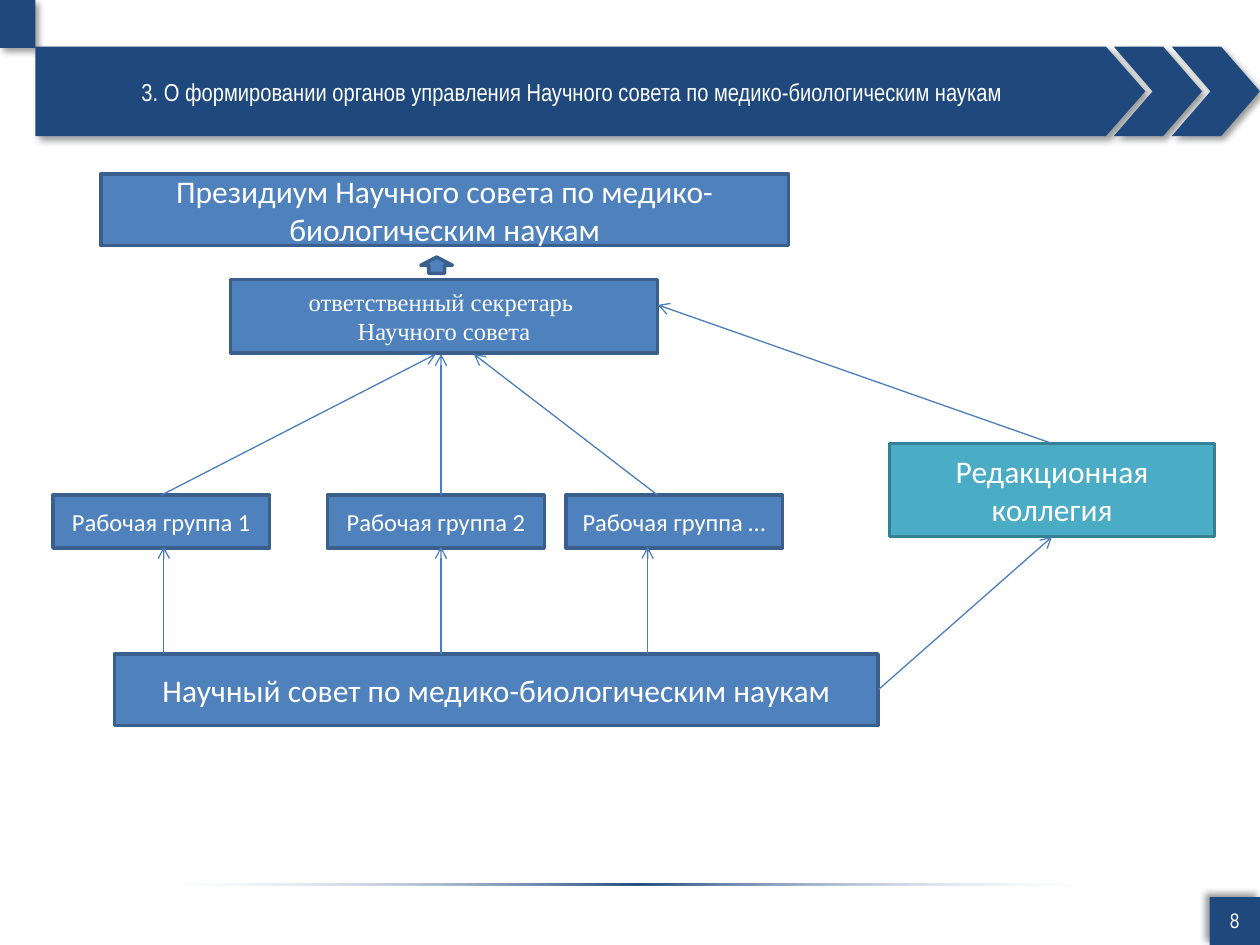
"""Build the slide on the governing bodies of the science council."""
import pptx
import pptx.util
import pptx.dml.color
import pptx.enum.shapes
import pptx.enum.text
import pptx.oxml
import pptx.oxml.ns

Inches, Pt = pptx.util.Inches, pptx.util.Pt
Kind = pptx.enum.shapes.MSO_SHAPE
NS = pptx.oxml.ns.nsdecls("a")
qn = pptx.oxml.ns.qn


class Theme:
    navy, blue, edge = "1F497D", "4F81BD", "3A5F8C"
    teal, rim, wire = "4BACC6", "377F92", "4B7EBC"
    pale, white, black = "DCE6F2", "FFFFFF", "000000"
    head, body, serif = "Arial Narrow", "Calibri", "Times New Roman"
    big, mid, small = 18, 14, 12
    border, thin = 2, 0.75


TITLE = "3. О формировании органов управления Научного совета по медико-биологическим наукам"
PAGE = "8"
BANDS = [
    (Kind.PENTAGON, (9.6, 7.12, 0.4, 0.38), 0, 225),
    (Kind.PENTAGON, (0, 0, 0.28, 0.38), 0, 45),
    (Kind.PENTAGON, (0.28, 0.37, 8.81, 0.71), 0.44, 45),
    (Kind.CHEVRON, (8.84, 0.37, 0.7, 0.71), 0.44, 45),
    (Kind.CHEVRON, (9.3, 0.37, 0.7, 0.71), 0.44, 45),
]
RULE = (0.28, 7.01, 9.37, 0.02)
STOPS = [(10, Theme.pale, 0), (51, Theme.navy, 100), (90, Theme.pale, 0)]
LABELS = [
    ((0.3, 0.38, 8.48, 0.7), TITLE, Theme.mid),
    ((9.6, 7.1, 0.4, 0.4), PAGE, Theme.small),
]
BLUE, TEAL = (Theme.blue, Theme.edge), (Theme.teal, Theme.rim)
BOXES = {
    "council": ((0.91, 5.19, 6.06, 0.57), ["Научный совет по медико-биологическим наукам"],
                Theme.big, Theme.body, BLUE),
    "board": ((0.8, 1.38, 5.46, 0.57), ["Президиум Научного совета по медико-биологическим наукам"],
              Theme.big, Theme.body, BLUE),
    "press": ((7.06, 3.52, 2.58, 0.74), ["Редакционная коллегия"],
              Theme.big, Theme.body, TEAL),
    "clerk": ((1.83, 2.22, 3.39, 0.58), ["ответственный секретарь ", "Научного совета"],
              Theme.mid, Theme.serif, BLUE),
}
GROUPS = [("1", 0.42), ("2", 2.6), ("…", 4.49)]
for mark, left in GROUPS:
    BOXES["group " + mark] = ((left, 3.93, 1.72, 0.42), ["Рабочая группа " + mark],
                              Theme.mid, Theme.body, BLUE)
ARROW = (3.34, 2.04, 0.25, 0.13)
LINKS = [((x, 5.19), (x, 4.34), None, None) for x in (1.3, 3.5, 5.14)] + [
    ((1.28, 3.93), (3.46, 2.81), ("group 1", 0), None),
    ((3.5, 3.93), (3.5, 2.81), None, None),
    ((5.22, 3.93), (3.76, 2.81), None, None),
    ((6.97, 5.48), (8.35, 4.26), ("council", 3), ("press", 2)),
    ((8.35, 3.52), (5.22, 2.42), ("press", 0), None),
]


def tint(code):
    return pptx.dml.color.RGBColor.from_string(code)


def write(shape, lines, size, font):
    frame = shape.text_frame
    frame.word_wrap = True
    frame.vertical_anchor = pptx.enum.text.MSO_ANCHOR.MIDDLE
    frame.text = "\n".join(lines)
    for para in frame.paragraphs:
        para.alignment = pptx.enum.text.PP_ALIGN.CENTER
        para.font.size, para.font.name = Pt(size), font
        para.font.color.rgb = tint(Theme.white)


def draw(slide, kind, place, fill, edge=None):
    shape = slide.shapes.add_shape(kind, *map(Inches, place))
    shape.shadow.inherit = False
    shape.fill.solid()
    shape.fill.fore_color.rgb = tint(fill)
    if edge:
        shape.line.color.rgb = tint(edge)
        shape.line.width = Pt(Theme.border)
    else:
        shape.line.fill.background()
    return shape


def shade(shape, angle):
    shape._element.spPr.find(qn("a:effectLst")).append(pptx.oxml.parse_xml(
        f'<a:outerShdw {NS} blurRad="{Pt(4)}" dist="{Pt(3)}" dir="{angle * 60000}"'
        f' algn="ctr" rotWithShape="0"><a:srgbClr val="{Theme.black}">'
        '<a:alpha val="40000"/></a:srgbClr></a:outerShdw>'))


def fade(shape):
    shape.fill.gradient()
    shape.fill.gradient_angle = 0
    stops = shape._element.spPr.find(qn("a:gradFill")).find(qn("a:gsLst"))
    for old in list(stops):
        stops.remove(old)
    for spot, code, alpha in STOPS:
        stops.append(pptx.oxml.parse_xml(
            f'<a:gs {NS} pos="{spot * 1000}"><a:srgbClr val="{code}">'
            f'<a:alpha val="{alpha * 1000}"/></a:srgbClr></a:gs>'))


def link(slide, boxes, start, end, head, tail):
    line = slide.shapes.add_connector(
        pptx.enum.shapes.MSO_CONNECTOR.STRAIGHT, *map(Inches, start + end))
    if head:
        line.begin_connect(boxes[head[0]], head[1])
    if tail:
        line.end_connect(boxes[tail[0]], tail[1])
    line.line.color.rgb = tint(Theme.wire)
    line.line.width = Pt(Theme.thin)
    props = line._element.spPr
    props.find(qn("a:ln")).append(pptx.oxml.parse_xml(f'<a:tailEnd {NS} type="arrow"/>'))
    props.append(pptx.oxml.parse_xml(f"<a:effectLst {NS}/>"))


def main():
    deck = pptx.Presentation()
    deck.slide_width, deck.slide_height = Inches(10), Inches(7.5)
    slide = deck.slides.add_slide(deck.slide_layouts[6])
    for kind, place, bend, angle in BANDS:
        band = draw(slide, kind, place, Theme.navy)
        band.adjustments[0] = bend
        shade(band, angle)
    rule = draw(slide, Kind.PENTAGON, RULE, Theme.navy)
    rule.adjustments[0] = 0
    fade(rule)
    for place, text, size in LABELS:
        write(slide.shapes.add_textbox(*map(Inches, place)), [text], size, Theme.head)
    boxes = {}
    for name, (place, lines, size, font, paint) in BOXES.items():
        boxes[name] = draw(slide, Kind.RECTANGLE, place, *paint)
        write(boxes[name], lines, size, font)
    for item in LINKS:
        link(slide, boxes, *item)
    draw(slide, Kind.DOWN_ARROW, ARROW, *BLUE).rotation = 180
    deck.save("out.pptx")


if __name__ == "__main__":
    main()
